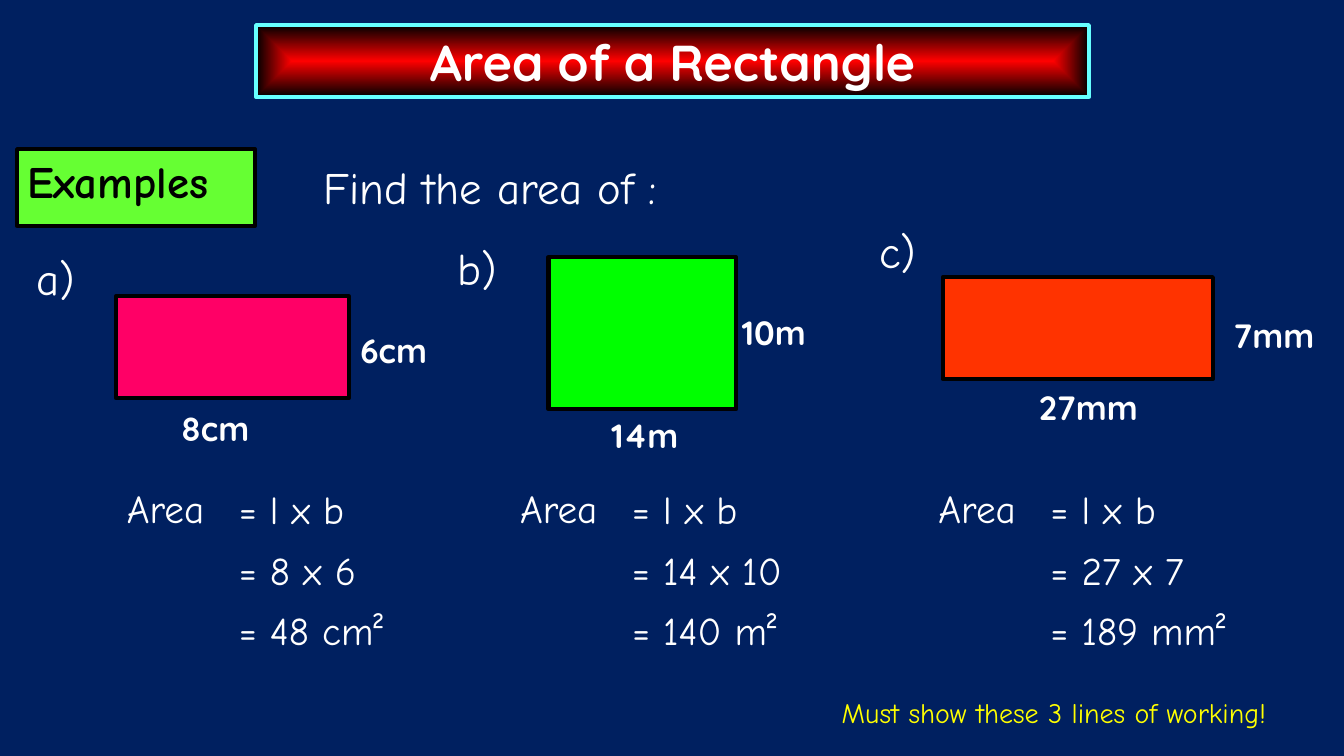
from dataclasses import dataclass

from lxml import etree
from pptx import Presentation
from pptx.dml.color import RGBColor
from pptx.enum.shapes import MSO_SHAPE
from pptx.enum.text import MSO_ANCHOR, MSO_AUTO_SIZE, PP_ALIGN
from pptx.oxml.ns import qn
from pptx.util import Inches, Pt

NAVY = RGBColor(0x00, 0x20, 0x60)
WHITE = RGBColor(0xFF, 0xFF, 0xFF)
BLACK = RGBColor(0x00, 0x00, 0x00)
RED = RGBColor(0xFF, 0x00, 0x00)
AQUA = RGBColor(0x66, 0xFF, 0xFF)
LIME = RGBColor(0x66, 0xFF, 0x33)
PINK = RGBColor(0xFF, 0x00, 0x66)
GREEN = RGBColor(0x00, 0xFF, 0x00)
ORANGE = RGBColor(0xFF, 0x33, 0x00)
YELLOW = RGBColor(0xFF, 0xFF, 0x00)

HAND, ROUND = "Comic Neue", "Quicksand"
TITLE = dict(name=ROUND, size=Pt(36), bold=True)
HEADING = dict(name=HAND, size=Pt(32))
BADGE = dict(name=HAND, size=Pt(32), bold=True)
MEASURE = dict(name=ROUND, size=Pt(24), bold=True)
WORKING = dict(name=HAND, size=Pt(28))
NOTE = dict(name=HAND, size=Pt(20))

COLUMN_LEFT, COLUMN_TOP, COLUMN_PITCH = 0.26, 2.17, 4.18
WORKING_TOP, LINE_PITCH, EQUALS_INDENT = 2.59, 0.6, 1.11


@dataclass
class Example:
    """One worked example; places are inches from its column's corner."""
    letter: str
    letter_top: float
    rect: tuple
    color: RGBColor
    length: str
    length_at: tuple
    breadth: str
    breadth_at: tuple
    working_left: float
    working: tuple
    widths: tuple


EXAMPLES = [
    Example("a)", 0.27, (0.89, 0.77, 2.31, 1.01), PINK,
            "8cm", (1.27, 1.83), "6cm", (3.04, 1.05), 0.9,
            ("= l x b", "= 8 x 6", "= 48 cm²"), (1.67, 1.79, 2)),
    Example("b)", 0.17, (1, 0.38, 1.86, 1.51), GREEN,
            "14m", (1.35, 1.9), "10m", (2.63, 0.88), 0.62,
            ("= l x b", "= 14 x 10", "= 140 m²"), (1.67, 1.84, 2.29)),
    Example("c)", 0, (0.73, 0.58, 2.68, 1.01), ORANGE,
            "27mm", (1.57, 1.62), "7mm", (3.41, 0.91), 0.59,
            ("= l x b", "= 27 x 7", "= 189 mm²"), (1.67, 1.79, 2.45)),
]


def write(tf, text, style, color=WHITE, align=PP_ALIGN.LEFT):
    p = tf.paragraphs[0]
    p.alignment = align
    r = p.add_run()
    r.text = text
    for key, value in style.items():
        setattr(r.font, key, value)
    r.font.color.rgb = color


def add_text(slide, box, text, style, color=WHITE, align=PP_ALIGN.LEFT, wrap=True):
    tf = slide.shapes.add_textbox(*map(Inches, box)).text_frame
    tf.word_wrap = wrap
    tf.auto_size = MSO_AUTO_SIZE.SHAPE_TO_FIT_TEXT
    write(tf, text, style, color, align)


def add_rectangle(slide, box, color):
    sp = slide.shapes.add_shape(MSO_SHAPE.RECTANGLE, *map(Inches, box))
    sp.shadow.inherit = False
    sp.fill.solid()
    sp.fill.fore_color.rgb = color
    sp.line.color.rgb = BLACK
    sp.line.width = Pt(3)
    return sp


def fill_from_center(sp, inner, outer):
    """Fill with a gradient that runs from the centre to the edges."""
    sp.fill.gradient()
    for stop, color, position in zip(sp.fill.gradient_stops, (inner, outer), (0, 1)):
        stop.color.rgb = color
        stop.position = position
    grad = sp.fill._xPr.find(qn("a:gradFill"))
    for lin in grad.findall(qn("a:lin")):
        grad.remove(lin)
    path = etree.Element(qn("a:path"), {"path": "shape"})
    etree.SubElement(path, qn("a:fillToRect"), dict.fromkeys("ltrb", "50000"))
    grad.find(qn("a:gsLst")).addnext(path)


def add_title(slide, box):
    sp = slide.shapes.title
    sp.left, sp.top, sp.width, sp.height = map(Inches, box)
    fill_from_center(sp, RED, BLACK)
    sp.line.color.rgb = AQUA
    sp.line.width = Pt(3)
    tf = sp.text_frame
    tf.auto_size = MSO_AUTO_SIZE.NONE
    tf.vertical_anchor = MSO_ANCHOR.MIDDLE
    write(tf, "Area of a Rectangle", TITLE, align=PP_ALIGN.CENTER)


def add_task(slide, left, top):
    badge = add_rectangle(slide, (left, top, 2.36, 0.76), LIME)
    badge.text_frame.vertical_anchor = MSO_ANCHOR.TOP
    write(badge.text_frame, "Examples", BADGE, BLACK)
    add_text(slide, (left + 2.94, top + 0.06, 4.1, 0.64), "Find the area of :", HEADING)


def add_working(slide, left, top, lines, widths):
    add_text(slide, (left, top, 1.1, 0.57), "Area", WORKING, wrap=False)
    for i, (line, width) in enumerate(zip(lines, widths)):
        box = (left + EQUALS_INDENT, top + 0.01 + i * LINE_PITCH, width, 0.57)
        add_text(slide, box, line, WORKING)


def add_example(slide, left, top, example):
    add_text(slide, (left, top + example.letter_top, 0.77, 0.64), example.letter, HEADING)
    for text, (x, y) in ((example.length, example.length_at),
                         (example.breadth, example.breadth_at)):
        add_text(slide, (left + x, top + y, 1.21, 0.5), text, MEASURE,
                 align=PP_ALIGN.CENTER)
    x, y, width, height = example.rect
    add_rectangle(slide, (left + x, top + y, width, height), example.color)
    add_working(slide, left + example.working_left, top + WORKING_TOP,
                example.working, example.widths)


def main():
    prs = Presentation()
    prs.slide_width, prs.slide_height = Inches(13.33), Inches(7.5)
    slide = prs.slides.add_slide(prs.slide_layouts.get_by_name("Title Only"))
    slide.background.fill.solid()
    slide.background.fill.fore_color.rgb = NAVY
    add_title(slide, (2.54, 0.25, 8.26, 0.71))
    add_task(slide, 0.17, 1.48)
    for i, example in enumerate(EXAMPLES):
        add_example(slide, COLUMN_LEFT + i * COLUMN_PITCH, COLUMN_TOP, example)
    add_text(slide, (8.25, 6.85, 4.86, 0.44), "Must show these 3 lines of working!",
             NOTE, YELLOW, wrap=False)
    prs.save("out.pptx")


if __name__ == "__main__":
    main()
